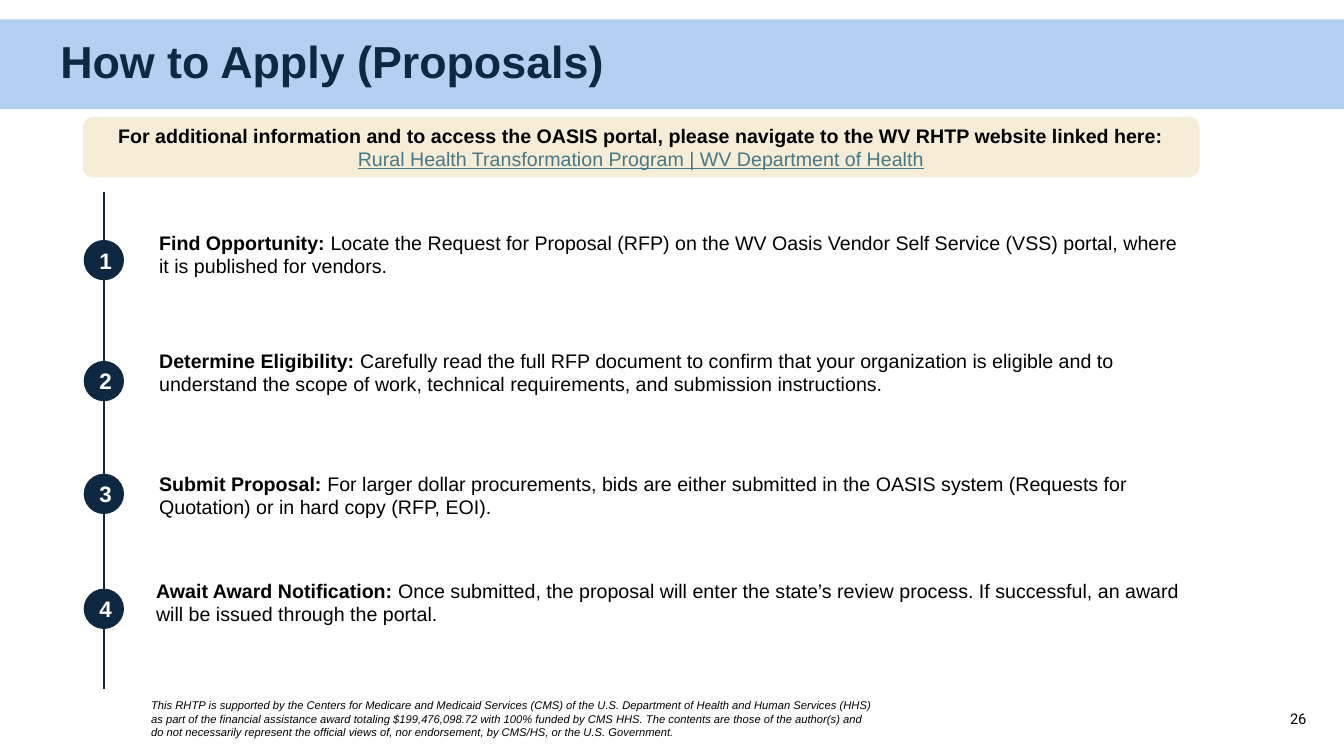
from lxml.etree import SubElement
from pptx import Presentation
from pptx.dml.color import RGBColor
from pptx.enum.shapes import MSO_CONNECTOR, MSO_SHAPE
from pptx.enum.text import MSO_ANCHOR, PP_ALIGN
from pptx.oxml.ns import qn
from pptx.util import Pt

NAVY = RGBColor(0x0E, 0x28, 0x41)
SKY = RGBColor(0xB3, 0xD0, 0xF3)
CREAM = RGBColor(0xF5, 0xED, 0xD5)
LINK = RGBColor(0x46, 0x78, 0x86)
BLACK = RGBColor(0, 0, 0)
WHITE = RGBColor(0xFF, 0xFF, 0xFF)

BODY = {"name": "Arial", "size": Pt(14), "bold": False}
LEAD = {**BODY, "bold": True}
HYPERLINK = {**BODY, "underline": True}
TITLE = {"name": "Arial", "size": Pt(32), "bold": True}
NUMBER = {"name": "Arial", "size": Pt(16), "bold": True}
SMALL_PRINT = {"name": "Arial", "size": Pt(8), "italic": True}
PAGE_NUMBER = {"name": "Roboto", "size": Pt(10.5)}

CIRCLE = 28.8
STEPS = [
    (171.4, 106.6, 161.3, "Find Opportunity: ",
     "Locate the Request for Proposal (RFP) on the WV Oasis Vendor Self Service (VSS) portal, "
     "where it is published for vendors."),
    (257.8, 106.6, 245.5, "Determine Eligibility: ",
     "Carefully read the full RFP document to confirm that your organization is eligible and to "
     "understand the scope of work, technical requirements, and submission instructions."),
    (338.4, 106.6, 333.4, "Submit Proposal: ",
     "For larger dollar procurements, bids are either submitted in the OASIS system "
     "(Requests for Quotation) or in hard copy (RFP, EOI)."),
    (420.5, 104.4, 409.7, "Await Award Notification: ",
     "Once submitted, the proposal will enter the state’s review process. If successful, "
     "an award will be issued through the portal."),
]


def write(shape, spans, align=PP_ALIGN.LEFT, anchor=MSO_ANCHOR.TOP):
    frame = shape.text_frame
    frame.word_wrap = True
    frame.vertical_anchor = anchor
    para = frame.paragraphs[0]
    para.alignment = align
    for text, style, colour in spans:
        span = para.add_run()
        span.text = text
        for attribute, value in style.items():
            setattr(span.font, attribute, value)
        span.font.color.rgb = colour
    return para


def add_text(page, box, spans, **layout):
    return write(page.shapes.add_textbox(*map(Pt, box)), spans, **layout)


def add_filled(page, kind, box, colour):
    shape = page.shapes.add_shape(kind, *map(Pt, box))
    shape.shadow.inherit = False
    shape.fill.solid()
    shape.fill.fore_color.rgb = colour
    shape.line.fill.background()
    return shape


def add_header(page, box):
    left, top, width, height = box
    add_filled(page, MSO_SHAPE.RECTANGLE, box, SKY)
    para = add_text(page, (left + 36, top, width - 52, height),
                    [("How to Apply (Proposals)", TITLE, NAVY)], anchor=MSO_ANCHOR.MIDDLE)
    para.line_spacing = 0.9


def add_banner(page, box):
    banner = add_filled(page, MSO_SHAPE.ROUNDED_RECTANGLE, box, CREAM)
    banner.adjustments[0] = 0.167
    banner.line.color.rgb = CREAM
    banner.line.width = Pt(1.5)
    write(banner, [
        ("For additional information and to access the OASIS portal, please navigate to the "
         "WV RHTP website linked here: ", LEAD, BLACK),
        ("Rural Health Transformation Program | WV Department of Health", HYPERLINK, LINK),
    ], align=PP_ALIGN.CENTER, anchor=MSO_ANCHOR.MIDDLE)


def add_timeline(page, box):
    left, top, width, height = box
    centre = left + CIRCLE / 2
    rail = page.shapes.add_connector(
        MSO_CONNECTOR.STRAIGHT, Pt(centre), Pt(top), Pt(centre), Pt(top + height))
    rail.line.color.rgb = NAVY
    rail.line.width = Pt(1)
    SubElement(rail._element.spPr, qn("a:effectLst"))
    for number, (circle_top, text_left, text_top, lead, detail) in enumerate(STEPS, 1):
        circle = add_filled(page, MSO_SHAPE.OVAL, (left, circle_top, CIRCLE, CIRCLE), NAVY)
        write(circle, [(str(number), NUMBER, WHITE)],
              align=PP_ALIGN.CENTER, anchor=MSO_ANCHOR.MIDDLE)
        add_text(page, (text_left, text_top, width, 41),
                 [(lead, LEAD, BLACK), (detail, BODY, BLACK)])


def add_footer(page, box):
    left, top, width, height = box
    add_text(page, (left, top, 534.2, height), [(
        "This RHTP is supported by the Centers for Medicare and Medicaid Services (CMS) of the "
        "U.S. Department of Health and Human Services (HHS) as part of the financial assistance "
        "award totaling $199,476,098.72 with 100% funded by CMS HHS. The contents are those of "
        "the author(s) and do not necessarily represent the official views of, nor endorsement, "
        "by CMS/HS, or the U.S. Government.", SMALL_PRINT, BLACK)])
    add_text(page, (left + width - 224, top + 3.6, 224, 28.8), [("26", PAGE_NUMBER, BLACK)],
             align=PP_ALIGN.RIGHT, anchor=MSO_ANCHOR.MIDDLE)


def main():
    deck = Presentation()
    deck.slide_width, deck.slide_height = Pt(960), Pt(540)
    page = deck.slides.add_slide(deck.slide_layouts[6])
    add_header(page, (0, 13.8, 960, 64.2))
    add_footer(page, (100.8, 495.4, 839.5, 36))
    add_timeline(page, (59.8, 137.5, 751.7, 355))
    add_banner(page, (59.8, 84.2, 796.3, 41.8))
    deck.save("out.pptx")


if __name__ == "__main__":
    main()
